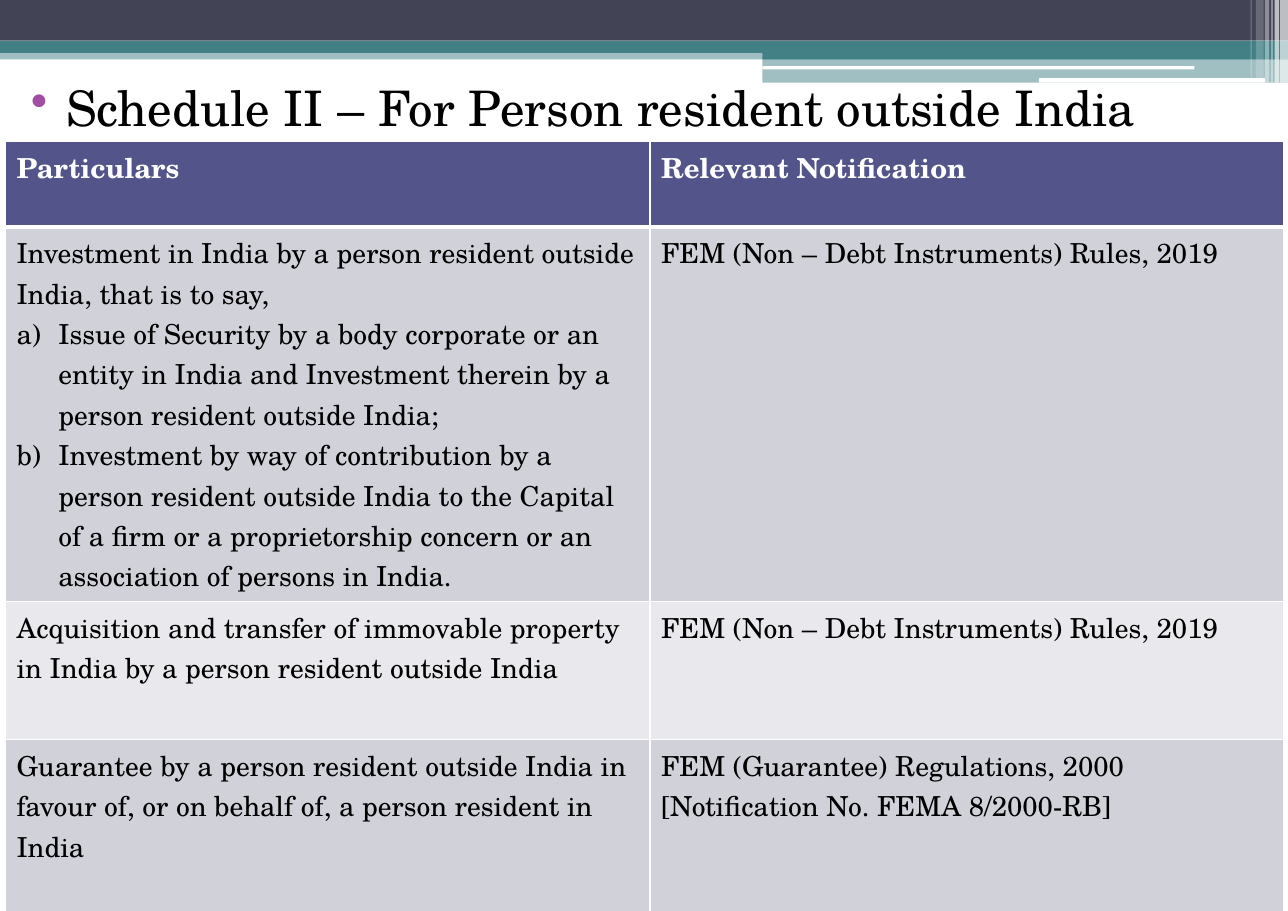
from dataclasses import dataclass

from lxml.etree import SubElement
from pptx import Presentation
from pptx.dml.color import RGBColor
from pptx.enum.shapes import MSO_SHAPE
from pptx.enum.text import MSO_ANCHOR, MSO_AUTO_SIZE, PP_ALIGN
from pptx.oxml.ns import qn
from pptx.slide import Slide
from pptx.table import _Cell
from pptx.text.text import _Paragraph
from pptx.util import Emu, Pt


@dataclass(frozen=True)
class Theme:
    font: str = "TeX Gyre Schola"
    title_size: int = 32
    table_size: int = 18
    text: str = "000000"
    white: str = "FFFFFF"
    slate: str = "424456"
    teal: str = "438086"
    bullet: str = "A04DA3"
    header: str = "53548A"
    band_dark: str = "D1D1DA"
    band_light: str = "E9E9ED"


@dataclass(frozen=True)
class Bar:
    left: int
    top: int
    width: int
    height: int
    color: str
    opacity: int = 100
    rounded: bool = False


@dataclass(frozen=True)
class Line:
    text: str
    lettered: bool = False


@dataclass(frozen=True)
class Row:
    height: int
    fill: str
    cells: tuple[tuple[Line, ...], tuple[Line, ...]]


THEME = Theme()
SLIDE_WIDTH, SLIDE_HEIGHT = 1169, 827
COLUMN_WIDTHS = (585, 575)
TABLE_LEFT, TABLE_TOP = 5, 128
TITLE = "Schedule II – For Person resident outside India"

BARS = (
    Bar(0, 44, 1169, 10, THEME.teal, 50),
    Bar(0, 0, 1169, 37, THEME.slate),
    Bar(0, 37, 1169, 11, THEME.teal),
    Bar(692, 43, 477, 11, THEME.teal),
    Bar(692, 53, 477, 22, THEME.teal, 50),
    Bar(692, 60, 392, 3, THEME.white, rounded=True),
    Bar(943, 71, 205, 4, THEME.white, rounded=True),
    Bar(1162, 0, 7, 75, THEME.white, 65),
    Bar(1157, 0, 4, 75, THEME.white, 65),
    Bar(1154, 0, 1, 75, THEME.white, 60),
    Bar(1148, 0, 4, 75, THEME.white, 40),
    Bar(1140, 0, 7, 71, THEME.white, 20),
    Bar(1135, 0, 1, 71, THEME.white, 30),
)

NON_DEBT_RULES = (Line("FEM (Non – Debt Instruments) Rules, 2019"),)

ROWS = (
    Row(78, THEME.header, ((Line("Particulars"),), (Line("Relevant Notification"),))),
    Row(334, THEME.band_dark, (
        (
            Line("Investment in India by a person resident outside India, that is to say,"),
            Line("Issue of Security by a body corporate or an entity in India and Investment "
                 "therein by a person resident outside India;", True),
            Line("Investment by way of contribution by a person resident outside India to the "
                 "Capital of a firm or a proprietorship concern or an association of persons "
                 "in India.", True),
        ),
        NON_DEBT_RULES,
    )),
    Row(125, THEME.band_light, (
        (Line("Acquisition and transfer of immovable property in India by a person resident "
              "outside India"),),
        NON_DEBT_RULES,
    )),
    Row(156, THEME.band_dark, (
        (Line("Guarantee by a person resident outside India in favour of, or on behalf of, "
              "a person resident in India"),),
        (Line("FEM (Guarantee) Regulations, 2000"), Line("[Notification No. FEMA 8/2000-RB]")),
    )),
)


def px(length: int) -> Emu:
    return Emu(length * 9144)


def add_text(paragraph: _Paragraph, text: str, size: int, color: str, bold: bool = False) -> None:
    run = paragraph.add_run()
    run.text = text
    run.font.name = THEME.font
    run.font.size = Pt(size)
    run.font.bold = bold
    run.font.color.rgb = RGBColor.from_string(color)


def set_hanging_indent(paragraph: _Paragraph, margin: int, hang: int) -> None:
    properties = paragraph._p.get_or_add_pPr()
    properties.set("marL", str(px(margin)))
    properties.set("indent", str(-px(hang)))


def add_bar(slide: Slide, bar: Bar) -> None:
    kind = MSO_SHAPE.ROUNDED_RECTANGLE if bar.rounded else MSO_SHAPE.RECTANGLE
    shape = slide.shapes.add_shape(kind, px(bar.left), px(bar.top), px(bar.width), px(bar.height))
    shape.shadow.inherit = False
    shape.line.fill.background()
    shape.fill.solid()
    shape.fill.fore_color.rgb = RGBColor.from_string(bar.color)
    if bar.opacity < 100:
        color = shape.fill._xPr.find(f".//{qn('a:srgbClr')}")
        SubElement(color, qn("a:alpha"), val=str(bar.opacity * 1000))


def format_title(slide: Slide) -> None:
    title = slide.shapes.title
    title.left, title.top, title.width, title.height = px(3), px(64), px(1053), px(64)
    frame = title.text_frame
    frame.word_wrap = True
    frame.auto_size = MSO_AUTO_SIZE.NONE
    frame.vertical_anchor = MSO_ANCHOR.TOP
    frame.margin_left = frame.margin_right = px(11)
    frame.margin_top = frame.margin_bottom = px(6)
    paragraph = frame.paragraphs[0]
    paragraph.alignment = PP_ALIGN.LEFT
    paragraph.space_before = Pt(3.4)
    set_hanging_indent(paragraph, 46, 32)
    properties = paragraph._p.get_or_add_pPr()
    bullet_color = SubElement(properties, qn("a:buClr"))
    SubElement(bullet_color, qn("a:srgbClr"), val=THEME.bullet)
    SubElement(properties, qn("a:buChar"), char="•")
    add_text(paragraph, TITLE, THEME.title_size, THEME.text)


def set_borders(cell: _Cell, top: int, bottom: int) -> None:
    properties = cell._tc.get_or_add_tcPr()
    for side, points in (("L", 1), ("R", 1), ("T", top), ("B", bottom)):
        line = SubElement(properties, qn(f"a:ln{side}"), w=str(Pt(points)))
        fill = SubElement(line, qn("a:solidFill"))
        SubElement(fill, qn("a:srgbClr"), val=THEME.white)


def fill_cell(cell: _Cell, lines: tuple[Line, ...], color: str, row_index: int) -> None:
    is_header = row_index == 0
    set_borders(cell, 3 if row_index == 1 else 1, 3 if is_header else 1)
    cell.fill.solid()
    cell.fill.fore_color.rgb = RGBColor.from_string(color)
    frame = cell.text_frame
    for index, line in enumerate(lines):
        paragraph = frame.add_paragraph() if index else frame.paragraphs[0]
        if line.lettered:
            set_hanging_indent(paragraph, 38, 38)
            SubElement(paragraph._p.get_or_add_pPr(), qn("a:buAutoNum"), type="alphaLcParenR")
        text_color = THEME.white if is_header else THEME.text
        add_text(paragraph, line.text, THEME.table_size, text_color, is_header)


def add_schedule_table(slide: Slide) -> None:
    width, height = sum(COLUMN_WIDTHS), sum(row.height for row in ROWS)
    table = slide.shapes.add_table(
        len(ROWS), len(COLUMN_WIDTHS), px(TABLE_LEFT), px(TABLE_TOP), px(width), px(height)
    ).table
    table.horz_banding = False
    for column, column_width in zip(table.columns, COLUMN_WIDTHS):
        column.width = px(column_width)
    for row_index, row in enumerate(ROWS):
        table.rows[row_index].height = px(row.height)
        for column_index, lines in enumerate(row.cells):
            fill_cell(table.cell(row_index, column_index), lines, row.fill, row_index)


def main() -> None:
    presentation = Presentation()
    presentation.slide_width = px(SLIDE_WIDTH)
    presentation.slide_height = px(SLIDE_HEIGHT)
    slide = presentation.slides.add_slide(presentation.slide_layouts.get_by_name("Title Only"))
    for bar in BARS:
        add_bar(slide, bar)
    format_title(slide)
    add_schedule_table(slide)
    presentation.save("out.pptx")


if __name__ == "__main__":
    main()
